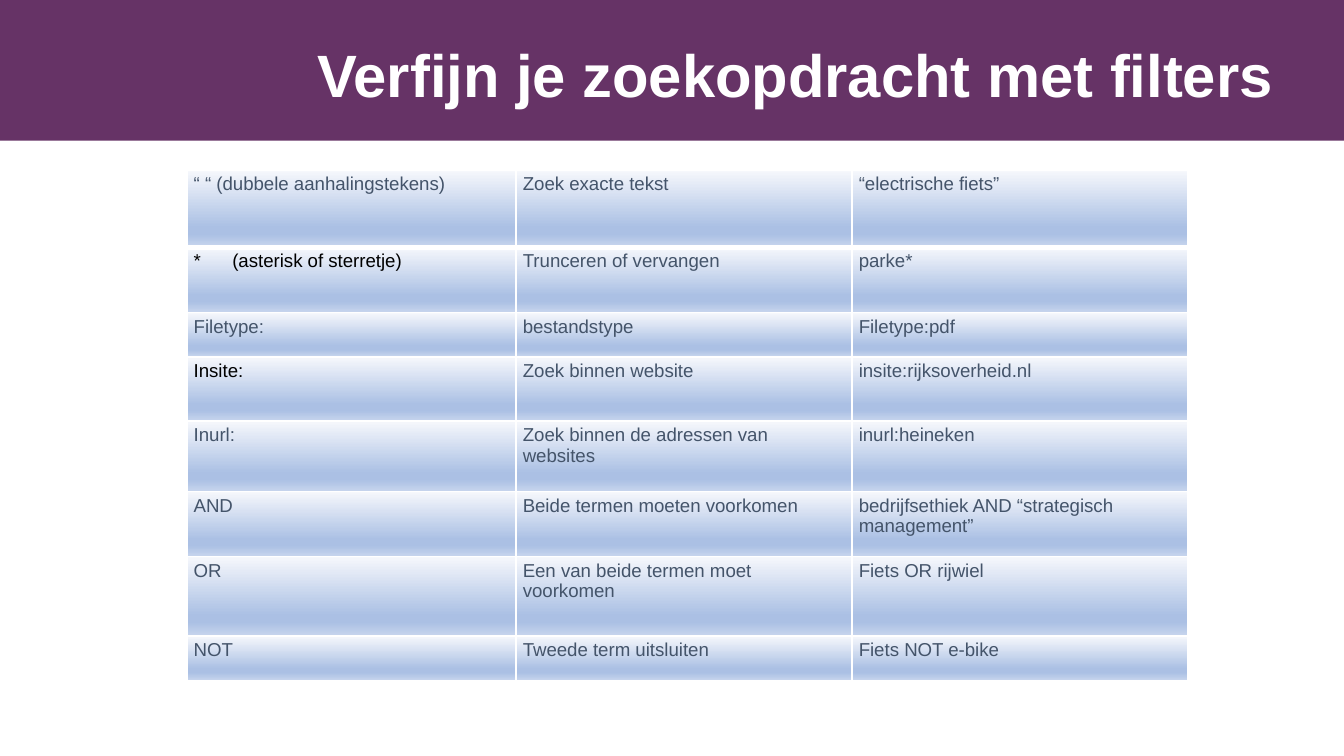
"""Build a slide with a table of search filters under a purple banner."""
from pptx import Presentation
from pptx import util as u
from pptx.dml.color import RGBColor
from pptx.enum import shapes, text
from pptx.oxml import parse_xml
from pptx.oxml.ns import nsdecls

COLORS = {
    "banner": "663366",
    "white": "FFFFFF",
    "body": "44546A",
    "accent": "000000",
}
GRADIENT = [(0, "F6F8FC"), (74, "ABC0E4"), (83, "ABC0E4"), (100, "C7D5ED")]
COLUMN_WIDTHS = [6.22, 6.35, 6.35]
ROW_HEIGHTS = [1.45, 1.24, 0.84, 1.21, 1.33, 1.23, 1.5, 0.84]
ROWS = [
    ("“ “ (dubbele aanhalingstekens)", "Zoek exacte tekst", "“electrische fiets”"),
    ("*\t(asterisk of sterretje)", "Trunceren of vervangen", "parke*"),
    ("Filetype:", "bestandstype", "Filetype:pdf"),
    ("Insite:", "Zoek binnen website", "insite:rijksoverheid.nl"),
    ("Inurl:", "Zoek binnen de adressen van websites", "inurl:heineken"),
    ("AND", "Beide termen moeten voorkomen", "bedrijfsethiek AND “strategisch management”"),
    ("OR", "Een van beide termen moet voorkomen", "Fiets OR rijwiel"),
    ("NOT", "Tweede term uitsluiten", "Fiets NOT e-bike"),
]
ACCENT_ROWS = (1, 3)


def write(frame, content, size=10, color="body", bold=False, tab=None):
    paragraph = frame.paragraphs[0]
    paragraph.text = content
    paragraph.alignment = text.PP_ALIGN.LEFT
    if tab:
        properties = paragraph._p.get_or_add_pPr()
        properties.append(parse_xml(
            f'<a:tabLst {nsdecls("a")}><a:tab pos="{u.Cm(tab)}" algn="l"/></a:tabLst>'))
    for run in paragraph.runs:
        run.font.name = "Arial"
        run.font.size = u.Pt(size)
        run.font.bold = bold
        run.font.color.rgb = RGBColor.from_string(COLORS[color])


class FilterSlide:
    def __init__(self, presentation):
        self.slide = presentation.slides.add_slide(presentation.slide_layouts[5])

    def banner(self, width, height):
        shape = self.slide.shapes.add_shape(
            shapes.MSO_SHAPE.RECTANGLE, 0, 0, u.Cm(width), u.Cm(height))
        shape.shadow.inherit = False
        shape.fill.solid()
        shape.fill.fore_color.rgb = RGBColor.from_string(COLORS["banner"])
        shape.line.fill.background()
        self.slide.shapes.title.element.addprevious(shape.element)

    def title(self, content, left, top, width, height):
        title = self.slide.shapes.title
        title.left, title.top = u.Cm(left), u.Cm(top)
        title.width, title.height = u.Cm(width), u.Cm(height)
        frame = title.text_frame
        frame.word_wrap = False
        frame.auto_size = text.MSO_AUTO_SIZE.SHAPE_TO_FIT_TEXT
        frame.vertical_anchor = text.MSO_ANCHOR.TOP
        write(frame, content, size=32, color="white", bold=True)

    def style_cell(self, cell, top, bottom):
        cell.margin_left = cell.margin_right = u.Cm(0.13)
        cell.margin_top = cell.margin_bottom = u.Cm(0.07)
        properties = cell._tc.get_or_add_tcPr()
        for side, points in (("L", 1), ("R", 1), ("T", top), ("B", bottom)):
            properties.append(parse_xml(
                f'<a:ln{side} {nsdecls("a")} w="{u.Pt(points)}"><a:solidFill>'
                f'<a:srgbClr val="{COLORS["white"]}"/></a:solidFill></a:ln{side}>'))
        stops = "".join(
            f'<a:gs pos="{position * 1000}"><a:srgbClr val="{color}"/></a:gs>'
            for position, color in GRADIENT)
        properties.append(parse_xml(
            f'<a:gradFill {nsdecls("a")} rotWithShape="1"><a:gsLst>{stops}</a:gsLst>'
            '<a:lin ang="5400000" scaled="0"/></a:gradFill>'))

    def table(self, rows, left, top):
        table = self.slide.shapes.add_table(
            len(rows), len(COLUMN_WIDTHS), u.Cm(left), u.Cm(top),
            u.Cm(sum(COLUMN_WIDTHS)), u.Cm(sum(ROW_HEIGHTS))).table
        table.first_row = table.horz_banding = False
        for column, width in zip(table.columns, COLUMN_WIDTHS):
            column.width = u.Cm(width)
        for i, values in enumerate(rows):
            table.rows[i].height = u.Cm(ROW_HEIGHTS[i])
            for j, value in enumerate(values):
                cell = table.cell(i, j)
                self.style_cell(cell, top=3 if i == 1 else 1, bottom=3 if i == 0 else 1)
                color = "accent" if j == 0 and i in ACCENT_ROWS else "body"
                write(cell.text_frame, value, color=color, tab=0.73 if "\t" in value else None)


def main():
    presentation = Presentation()
    presentation.slide_width, presentation.slide_height = u.Cm(25.4), u.Cm(14.29)
    page = FilterSlide(presentation)
    page.banner(25.4, 2.66)
    page.title("Verfijn je zoekopdracht met filters", 5.74, 0.58, 19.05, 1.63)
    page.table(ROWS, 3.53, 3.22)
    presentation.save("out.pptx")


if __name__ == "__main__":
    main()
